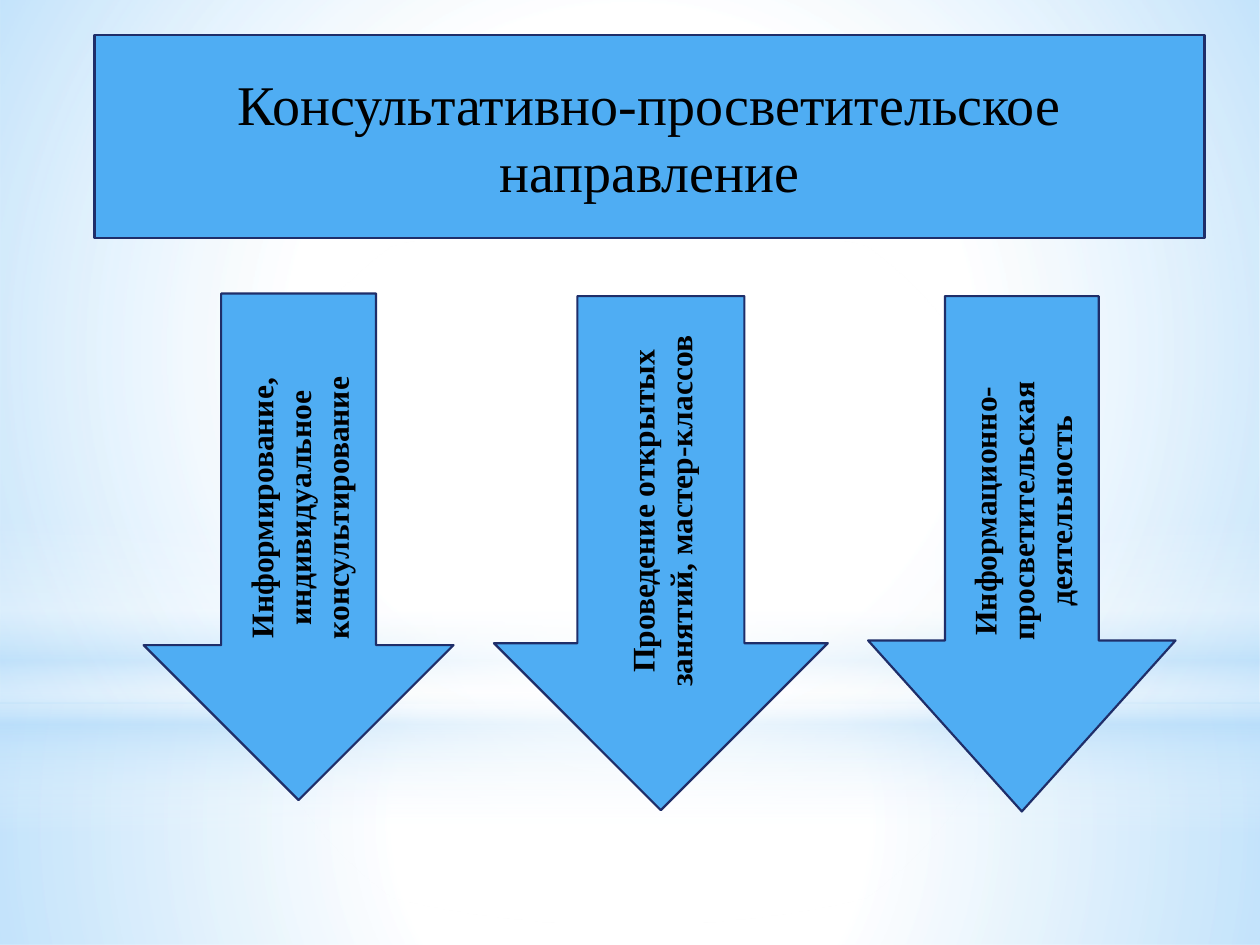
from dataclasses import dataclass
from typing import Optional

from lxml import etree
from pptx import Presentation
from pptx.dml.color import RGBColor
from pptx.enum import shapes, text
from pptx.oxml import ns
from pptx.util import Inches, Pt


@dataclass(frozen=True)
class Theme:
    font: str = "Times New Roman"
    ink: str = "000000"
    fill: str = "4FADF3"
    outline: str = "1F2E69"
    white: str = "FFFFFF"
    sky: str = "B4DCFA"
    outline_width: float = 1.25
    title_size: int = 32
    arrow_size: int = 18


@dataclass(frozen=True)
class Box:
    left: float
    top: float
    width: float
    height: float


@dataclass(frozen=True)
class Glow:
    box: Box
    kind: shapes.MSO_SHAPE
    stops: tuple  # (position %, colour, opacity %)
    angle: Optional[int] = None  # None means radial from the centre


@dataclass(frozen=True)
class Arrow:
    box: Box
    label: str
    head: float = 0.5


THEME = Theme()
RECT, OVAL = shapes.MSO_SHAPE.RECTANGLE, shapes.MSO_SHAPE.OVAL
WHITE, SKY = THEME.white, THEME.sky

GLOWS = [
    Glow(Box(0, 5.58, 10, 1.92), RECT,
         ((0, WHITE, 91), (37, WHITE, 76), (100, SKY, 79))),
    Glow(Box(0, 0, 10, 5.58), RECT,
         ((0, WHITE, 89), (48, WHITE, 62), (100, SKY, 79))),
    Glow(Box(0, 4.12, 10, 2.5), RECT,
         ((0, WHITE, 0), (29, WHITE, 30), (45, SKY, 40),
          (55, WHITE, 26), (65, SKY, 60), (100, WHITE, 0)), angle=90),
    Glow(Box(0, 1.75, 10, 5.58), OVAL, ((0, WHITE, 100), (56, WHITE, 0))),
]
TITLE_BOX = Box(0.75, 0.28, 8.81, 1.61)
ARROWS = [
    Arrow(Box(3.92, 2.35, 2.65, 4.08), "Проведение открытых занятий, мастер-классов"),
    Arrow(Box(6.89, 2.35, 2.44, 4.09),
          "Информационно-просветительская деятельность", head=0.556),
    Arrow(Box(1.14, 2.33, 2.46, 4.02),
          "Информирование, индивидуальное консультирование"),
]


def add_plain_shape(slide, kind: shapes.MSO_SHAPE, box: Box):
    shape = slide.shapes.add_shape(kind, Inches(box.left), Inches(box.top),
                                   Inches(box.width), Inches(box.height))
    shape.shadow.inherit = False
    return shape


def add_child(parent, tag: str, **attributes):
    return etree.SubElement(parent, ns.qn(tag),
                            {name: str(value) for name, value in attributes.items()})


def add_glow(slide, glow: Glow) -> None:
    shape = add_plain_shape(slide, glow.kind, glow.box)
    shape.line.fill.background()
    shape.fill.background()
    properties = shape.element.spPr
    gradient = etree.Element(ns.qn("a:gradFill"), {"rotWithShape": "1"})
    properties.replace(properties.find(ns.qn("a:noFill")), gradient)
    stops = add_child(gradient, "a:gsLst")
    for position, colour, opacity in glow.stops:
        stop = add_child(stops, "a:gs", pos=position * 1000)
        rgb = add_child(stop, "a:srgbClr", val=colour)
        add_child(rgb, "a:alpha", val=opacity * 1000)
    if glow.angle is None:
        radial = add_child(gradient, "a:path", path="circle")
        add_child(radial, "a:fillToRect", l=50000, t=50000, r=50000, b=50000)
    else:
        add_child(gradient, "a:lin", ang=glow.angle * 60000, scaled=0)


def add_labelled_shape(slide, kind: shapes.MSO_SHAPE, box: Box, label: str,
                       size: int, bold: bool = False):
    shape = add_plain_shape(slide, kind, box)
    shape.fill.solid()
    shape.fill.fore_color.rgb = RGBColor.from_string(THEME.fill)
    shape.line.color.rgb = RGBColor.from_string(THEME.outline)
    shape.line.width = Pt(THEME.outline_width)
    frame = shape.text_frame
    frame.word_wrap = True
    frame.vertical_anchor = text.MSO_ANCHOR.MIDDLE
    paragraph = frame.paragraphs[0]
    paragraph.alignment = text.PP_ALIGN.CENTER
    run = paragraph.add_run()
    run.text = label
    run.font.name = THEME.font
    run.font.size = Pt(size)
    run.font.bold = bold
    run.font.color.rgb = RGBColor.from_string(THEME.ink)
    return shape


def add_arrow(slide, arrow: Arrow) -> None:
    shape = add_labelled_shape(slide, shapes.MSO_SHAPE.DOWN_ARROW, arrow.box,
                               arrow.label, THEME.arrow_size, bold=True)
    shape.adjustments[1] = arrow.head
    # Text reads from bottom to top
    shape.text_frame._txBody.bodyPr.set("vert", "vert270")


def main() -> None:
    deck = Presentation()
    deck.slide_width, deck.slide_height = Inches(10), Inches(7.5)
    slide = deck.slides.add_slide(deck.slide_layouts[6])

    # Background
    slide.background.fill.solid()
    slide.background.fill.fore_color.rgb = RGBColor.from_string(WHITE)
    for glow in GLOWS:
        add_glow(slide, glow)

    # Title
    add_labelled_shape(slide, RECT, TITLE_BOX,
                       "Консультативно-просветительское направление",
                       THEME.title_size)

    # Activities
    for arrow in ARROWS:
        add_arrow(slide, arrow)

    deck.save("out.pptx")


if __name__ == "__main__":
    main()
